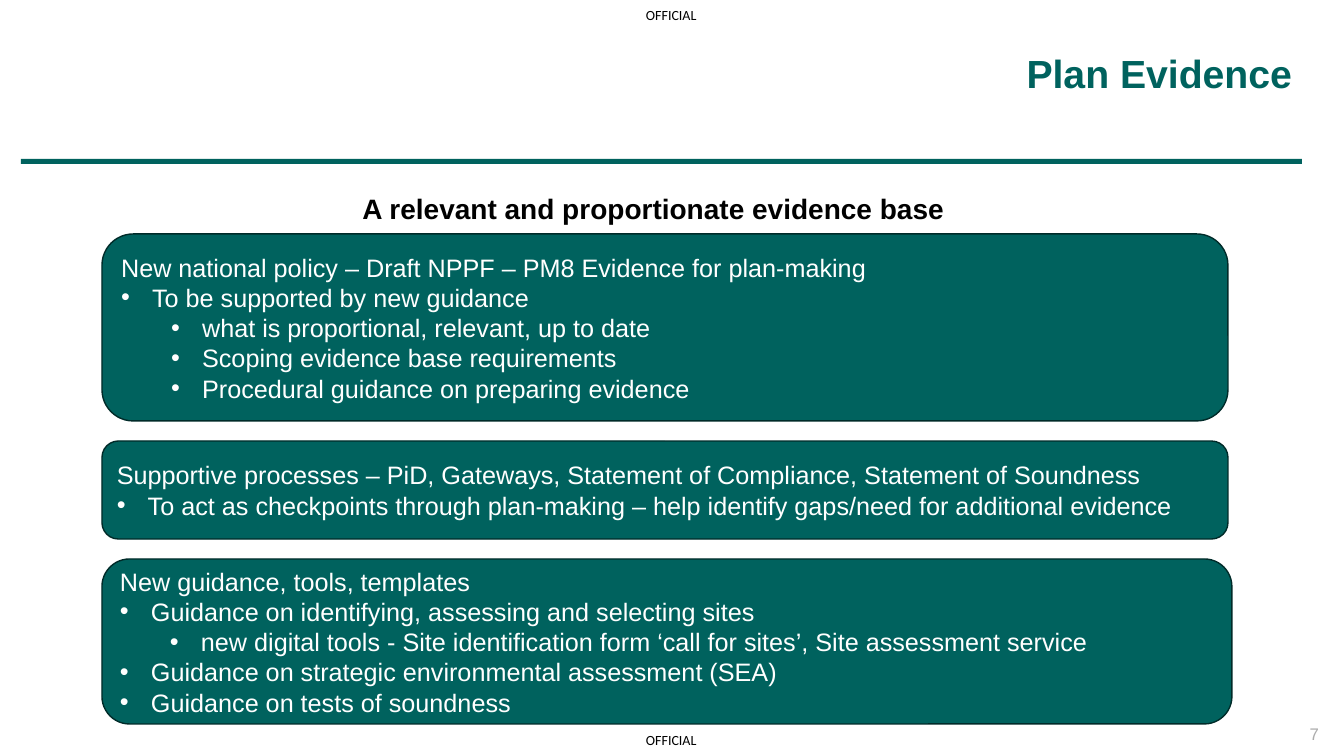
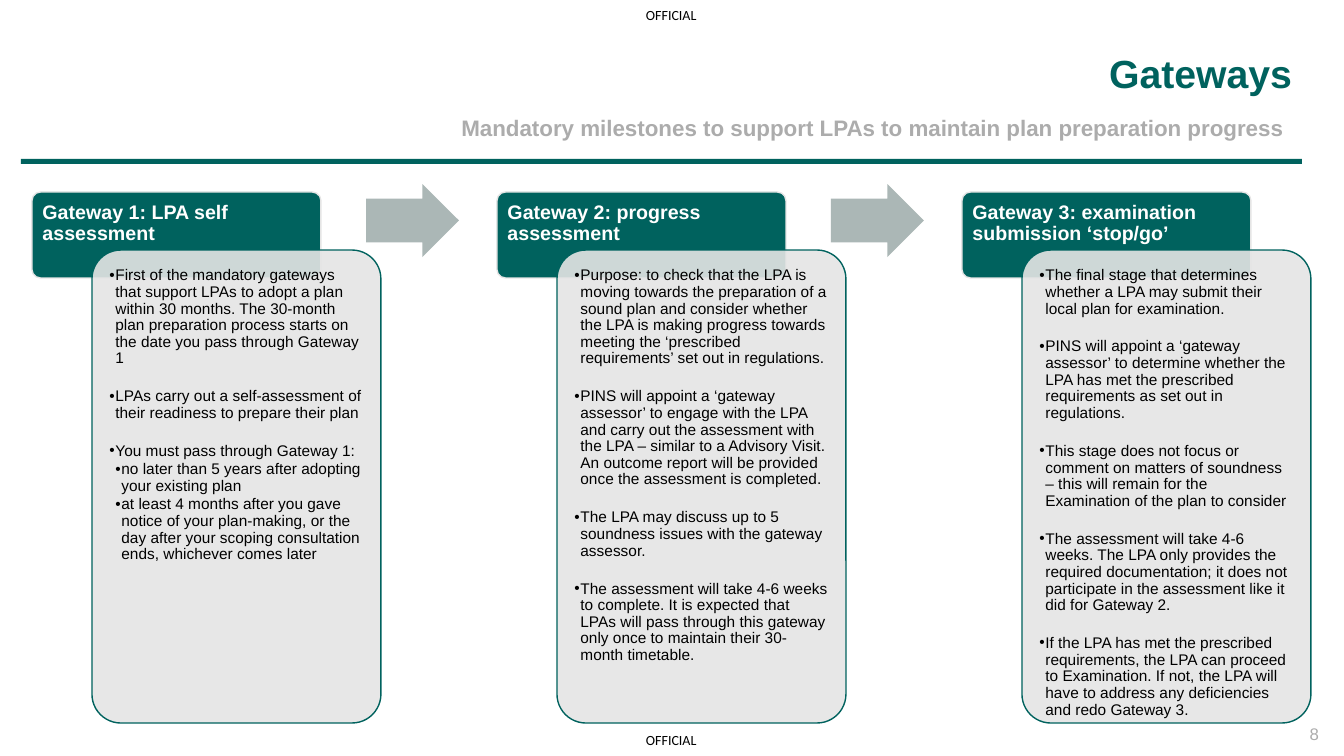
import pptx
import pptx.util
import pptx.dml.color
import pptx.enum.shapes
import pptx.enum.text
import pptx.oxml.ns
import lxml.etree

RGBColor = pptx.dml.color.RGBColor
SHAPE = pptx.enum.shapes.MSO_SHAPE
ALIGN = pptx.enum.text.PP_ALIGN
ANCHOR = pptx.enum.text.MSO_ANCHOR
qn = pptx.oxml.ns.qn

GREEN = RGBColor(0x00, 0x62, 0x5E)
DARK_GREEN = RGBColor(0x00, 0x2B, 0x29)
GREY = RGBColor(0xAC, 0xAC, 0xAC)
PALE_GREY = RGBColor(0xE5, 0xE5, 0xE5)
ARROW_GREY = RGBColor(0xAB, 0xB7, 0xB6)
BLACK = RGBColor(0x00, 0x00, 0x00)
WHITE = RGBColor(0xFF, 0xFF, 0xFF)

EMU_PER_PX = 914400 / 100.8
TITLE_ONLY, TITLE_AND_BODY = 5, 1

MARKING = "OFFICIAL"
MARKING_TOPS = (7, 732)

EVIDENCE_HEADING = "A relevant and proportionate evidence base"
EVIDENCE_BOXES = [
    (1126, 187, "New national policy – Draft NPPF – PM8 Evidence for plan-making", [
        (0, "To be supported by new guidance"),
        (1, "what is proportional, relevant, up to date"),
        (1, "Scoping evidence base requirements"),
        (1, "Procedural guidance on preparing evidence"),
    ]),
    (1126, 98, "Supportive processes – PiD, Gateways, Statement of Compliance, Statement of Soundness", [
        (0, "To act as checkpoints through plan-making – help identify gaps/need for additional evidence"),
    ]),
    (1130, 165, "New guidance, tools, templates", [
        (0, "Guidance on identifying, assessing and selecting sites"),
        (1, "new digital tools - Site identification form ‘call for sites’, Site assessment service"),
        (0, "Guidance on strategic environmental assessment (SEA)"),
        (0, "Guidance on tests of soundness"),
    ]),
]
BOX_LEFT, BOX_TOP, BOX_GAP = 102, 234, 20

GATEWAYS_SUBTITLE = "Mandatory milestones to support LPAs to maintain plan preparation progress"
GATEWAYS = [
    ("Gateway 1: LPA self assessment", [
        (0, "First of the mandatory gateways that support LPAs to adopt a plan within 30 months. "
            "The 30-month plan preparation process starts on the date you pass through Gateway 1"),
        (0, "LPAs carry out a self-assessment of their readiness to prepare their plan"),
        (0, "You must pass through Gateway 1:"),
        (1, "no later than 5 years after adopting your existing plan"),
        (1, "at least 4 months after you gave notice of your plan-making, or the day after "
            "your scoping consultation ends, whichever comes later"),
    ]),
    ("Gateway 2: progress assessment", [
        (0, "Purpose: to check that the LPA is moving towards the preparation of a sound plan "
            "and consider whether the LPA is making progress towards meeting the "
            "‘prescribed requirements’ set out in regulations."),
        (0, "PINS will appoint a ‘gateway assessor’ to engage with the LPA and carry out the "
            "assessment with the LPA – similar to a Advisory Visit. An outcome report will be "
            "provided once the assessment is completed."),
        (0, "The LPA may discuss up to 5 soundness issues with the gateway assessor."),
        (0, "The assessment will take 4-6 weeks to complete. It is expected that LPAs will pass "
            "through this gateway only once to maintain their 30-month timetable."),
    ]),
    ("Gateway 3: examination submission ‘stop/go’", [
        (0, "The final stage that determines whether a LPA may submit their local plan for examination."),
        (0, "PINS will appoint a ‘gateway assessor’ to determine whether the LPA has met the "
            "prescribed requirements as set out in regulations."),
        (0, "This stage does not focus or comment on matters of soundness – this will remain "
            "for the Examination of the plan to consider"),
        (0, "The assessment will take 4-6 weeks. The LPA only provides the required documentation; "
            "it does not participate in the assessment like it did for Gateway 2."),
        (0, "If the LPA has met the prescribed requirements, the LPA can proceed to Examination. "
            "If not, the LPA will have to address any deficiencies and redo Gateway 3."),
    ]),
]
GATEWAY_LEFT, GATEWAY_PITCH, GATEWAY_WIDTH = 32, 465, 289


def px(n):
    return pptx.util.Emu(round(n * EMU_PER_PX))


def place(sp, x, y, w, h):
    sp.left, sp.top, sp.width, sp.height = px(x), px(y), px(w), px(h)


def setup_frame(sp, anchor, insets=(0, 0, 0, 0), wrap=True):
    tf = sp.text_frame
    tf.word_wrap = wrap
    tf.auto_size = pptx.enum.text.MSO_AUTO_SIZE.NONE
    tf.vertical_anchor = anchor
    tf.margin_left, tf.margin_top, tf.margin_right, tf.margin_bottom = map(px, insets)
    return tf


def set_bullet(p, indent, hang):
    pPr = p._p.get_or_add_pPr()
    pPr.set("marL", str(px(indent)))
    pPr.set("indent", str(-px(hang)))
    if hang:
        lxml.etree.SubElement(pPr, qn("a:buFont")).set("typeface", "Arial")
        lxml.etree.SubElement(pPr, qn("a:buChar")).set("char", "•")
    else:
        lxml.etree.SubElement(pPr, qn("a:buNone"))


def write(tf, text, size, color, bold=False, align=ALIGN.LEFT, font="Arial",
          spacing=1.0, before=0, level=0, indent=0, hang=0):
    p = tf.paragraphs[0] if not tf.text else tf.add_paragraph()
    set_bullet(p, indent, hang)
    p.level = level
    p.alignment = align
    p.line_spacing = spacing
    p.space_before = pptx.util.Pt(before)
    p.space_after = pptx.util.Pt(0)
    r = p.add_run()
    r.text = text
    r.font.name, r.font.size, r.font.bold = font, pptx.util.Pt(size), bold
    r.font.color.rgb = color


def add_shape(s, kind, box, fill, line=None, adjustments=(), alpha=None):
    sp = s.shapes.add_shape(kind, *map(px, box))
    sp.shadow.inherit = False
    sp.fill.solid()
    sp.fill.fore_color.rgb = fill
    if line is None:
        sp.line.fill.background()
    else:
        sp.line.color.rgb = line
        sp.line.width = pptx.util.Pt(1)
    for i, value in enumerate(adjustments):
        sp.adjustments[i] = value
    if alpha is not None:
        color = sp.element.spPr.find(qn("a:solidFill")).find(qn("a:srgbClr"))
        lxml.etree.SubElement(color, qn("a:alpha")).set("val", str(alpha * 1000))
    return sp


def add_text(s, box, text, size, color, anchor=ANCHOR.TOP, wrap=True, **style):
    sp = s.shapes.add_textbox(*map(px, box))
    write(setup_frame(sp, anchor, wrap=wrap), text, size, color, **style)


def add_slide(prs, layout, title, number):
    s = prs.slides.add_slide(prs.slide_layouts[layout])
    for top in MARKING_TOPS:
        add_text(s, (646, top, 54, 17), MARKING, 10, BLACK, wrap=False, font="Calibri")
    add_shape(s, SHAPE.RECTANGLE, (21, 159, 1281, 5), GREEN)
    add_text(s, (1257, 724, 62, 20), str(number), 12, GREY, ANCHOR.MIDDLE, align=ALIGN.RIGHT)
    place(s.shapes.title, 454, 55, 838, 42)
    write(setup_frame(s.shapes.title, ANCHOR.BOTTOM), title, 28, GREEN,
          bold=True, align=ALIGN.RIGHT, spacing=0.9)
    return s


def build_evidence(prs):
    s = add_slide(prs, TITLE_ONLY, "Plan Evidence", 7)
    add_text(s, (18, 191, 1271, 36), EVIDENCE_HEADING, 20, BLACK, bold=True, align=ALIGN.CENTER)
    top = BOX_TOP
    for width, height, lead, points in EVIDENCE_BOXES:
        sp = add_shape(s, SHAPE.ROUNDED_RECTANGLE, (BOX_LEFT, top, width, height), GREEN, DARK_GREEN)
        tf = setup_frame(sp, ANCHOR.MIDDLE, (10, 5, 10, 5))
        write(tf, lead, 18, WHITE)
        for level, text in points:
            write(tf, text, 18, WHITE, level=level, indent=31 + 50 * level, hang=31)
        top += height + BOX_GAP


def build_gateways(prs):
    s = add_slide(prs, TITLE_AND_BODY, "Gateways", 8)
    subtitle = s.placeholders[1]
    place(subtitle, 21, 117, 1263, 24)
    write(setup_frame(subtitle, ANCHOR.TOP), GATEWAYS_SUBTITLE, 16, GREY,
          bold=True, align=ALIGN.RIGHT, spacing=0.9)
    for i, (name, points) in enumerate(GATEWAYS):
        x = GATEWAY_LEFT + i * GATEWAY_PITCH
        header = add_shape(s, SHAPE.ROUNDED_RECTANGLE, (x, 192, GATEWAY_WIDTH, 86),
                           GREEN, PALE_GREY, [0.1])
        write(setup_frame(header, ANCHOR.TOP, (8, 8, 8, 4)), name, 14, WHITE,
              bold=True, spacing=0.9)
        card = add_shape(s, SHAPE.ROUNDED_RECTANGLE, (x + 60, 250, GATEWAY_WIDTH, 473),
                         PALE_GREY, GREEN, [0.1], alpha=90)
        tf = setup_frame(card, ANCHOR.TOP, (9, 9, 9, 0))
        for j, (level, text) in enumerate(points):
            before = 0 if j == 0 else 1.3 if level else 15.2
            write(tf, text, 11, BLACK, spacing=0.9, before=before,
                  level=level, indent=6 + 6 * level, hang=6)
        if i < len(GATEWAYS) - 1:
            add_shape(s, SHAPE.RIGHT_ARROW, (x + 334, 184, 93, 73), ARROW_GREY,
                      adjustments=[0.6, 0.5])


def main():
    prs = pptx.Presentation()
    prs.slide_width, prs.slide_height = px(1344), px(756)
    build_evidence(prs)
    build_gateways(prs)
    prs.save("out.pptx")


if __name__ == "__main__":
    main()
